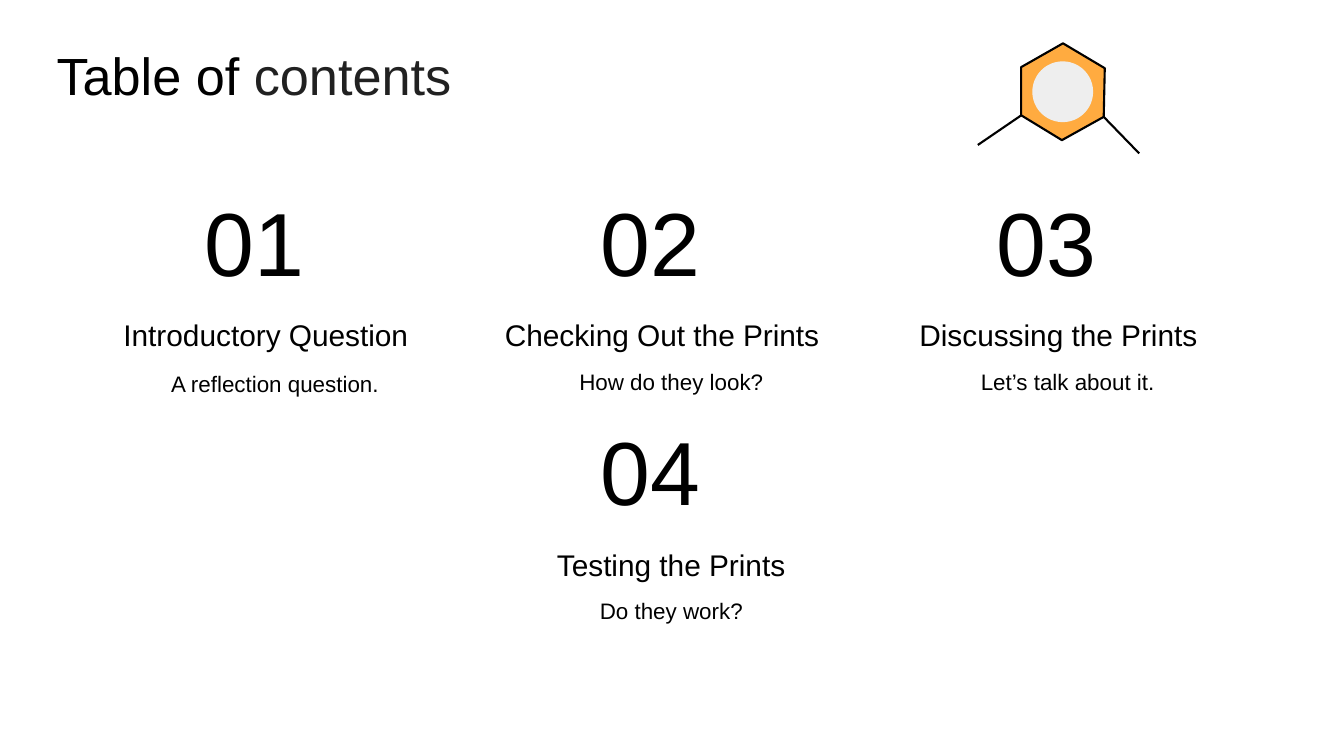
from pptx import Presentation
from pptx.dml.color import RGBColor
from pptx.enum import shapes, text
from pptx.oxml.ns import qn
from pptx.util import Cm, Pt

# Content: number, heading, note, column, row, heading nudge, note line spacing
ITEMS = [
    ("01", "Introductory Question", "A reflection question.", 0, 0, 0, 1.15),
    ("02", "Checking Out the Prints", "How do they look?", 1, 0, 0, 1),
    ("03", "Discussing the Prints", "Let’s talk about it.", 2, 0, 0, 1),
    ("04", "Testing the Prints", "Do they work?", 1, 1, 0.17, 1),
]
TITLE = [("Table of ", "ink"), ("contents", "soft")]
HUES = {"ink": "000000", "soft": "212121", "ring": "FFAB40", "core": "EEEEEE"}

# Grid and box places within a cell, in cm: left, top, width, height, size
LEFT, TOP, STEP, DROP = 2, 3.58, 7.49, 4.34
NUM = (1.23, 0, 3.15, 1.93, 48)
HEAD = (-0.34, 2.26, 6.73, 0.97, 16)
NOTE = (0, 2.95, 6.4, 1.35, 12)

# Molecule, in cm
HEX = [(19.3, 2.18), (19.3, 1.27), (20.09, 0.82),
       (20.88, 1.29), (20.86, 2.21), (20.07, 2.65)]
BONDS = [(HEX[0], (18.48, 2.74)), (HEX[4], (21.53, 2.9))]
CORE = (19.51, 1.16, 1.15)
WIDE = 0.04


def hue(name):
    return RGBColor.from_string(HUES[name])


def paint(shape, fill):
    shape.shadow.inherit = False
    shape.fill.solid()
    shape.fill.fore_color.rgb = hue(fill)


def ink(line):
    line.color.rgb = hue("ink")
    line.width = Cm(WIDE)


def write(slide, box, runs, size, align, anchor, space=1):
    frame = slide.shapes.add_textbox(*map(Cm, box)).text_frame
    frame.word_wrap = True
    frame.vertical_anchor = anchor
    frame.margin_left = frame.margin_right = Cm(0.25)
    frame.margin_top = frame.margin_bottom = Cm(0.25)
    para = frame.paragraphs[0]
    para.alignment, para.line_spacing = align, space
    para.font.name, para.font.size = "Arial", Pt(size)
    for words, tint in runs:
        run = para.add_run()
        run.text = words
        run.font.color.rgb = hue(tint)


deck = Presentation()
deck.slide_width, deck.slide_height = Cm(25.4), Cm(14.29)
slide = deck.slides.add_slide(deck.slide_layouts[6])

# Title
write(slide, (0.82, 0.56, 21.41, 1.6), TITLE, 28,
      text.PP_ALIGN.LEFT, text.MSO_ANCHOR.TOP)

# Contents grid
for num, head, note, col, row, nudge, space in ITEMS:
    x, y = LEFT + col * STEP, TOP + row * DROP
    for words, part, shift, gap in ((num, NUM, 0, 1), (head, HEAD, nudge, 1),
                                    (note, NOTE, 0, space)):
        left, top, wide, high, size = part
        write(slide, (x + left + shift, y + top, wide, high), [(words, "ink")],
              size, text.PP_ALIGN.CENTER, text.MSO_ANCHOR.MIDDLE, gap)

# Molecule: bonds, ring, core
for start, end in BONDS:
    bond = slide.shapes.add_connector(
        shapes.MSO_CONNECTOR.STRAIGHT, *map(Cm, start + end))
    ink(bond.line)
    bond._element.spPr.append(
        bond._element.spPr.makeelement(qn("a:effectLst"), {}))

dots = [(Cm(x), Cm(y)) for x, y in HEX]
path = slide.shapes.build_freeform(*dots[0])
path.add_line_segments(dots[1:], close=True)
ring = path.convert_to_shape()
paint(ring, "ring")
ink(ring.line)

left, top, size = map(Cm, CORE)
core = slide.shapes.add_shape(shapes.MSO_SHAPE.OVAL, left, top, size, size)
paint(core, "core")
core.line.fill.background()

deck.save("out.pptx")
